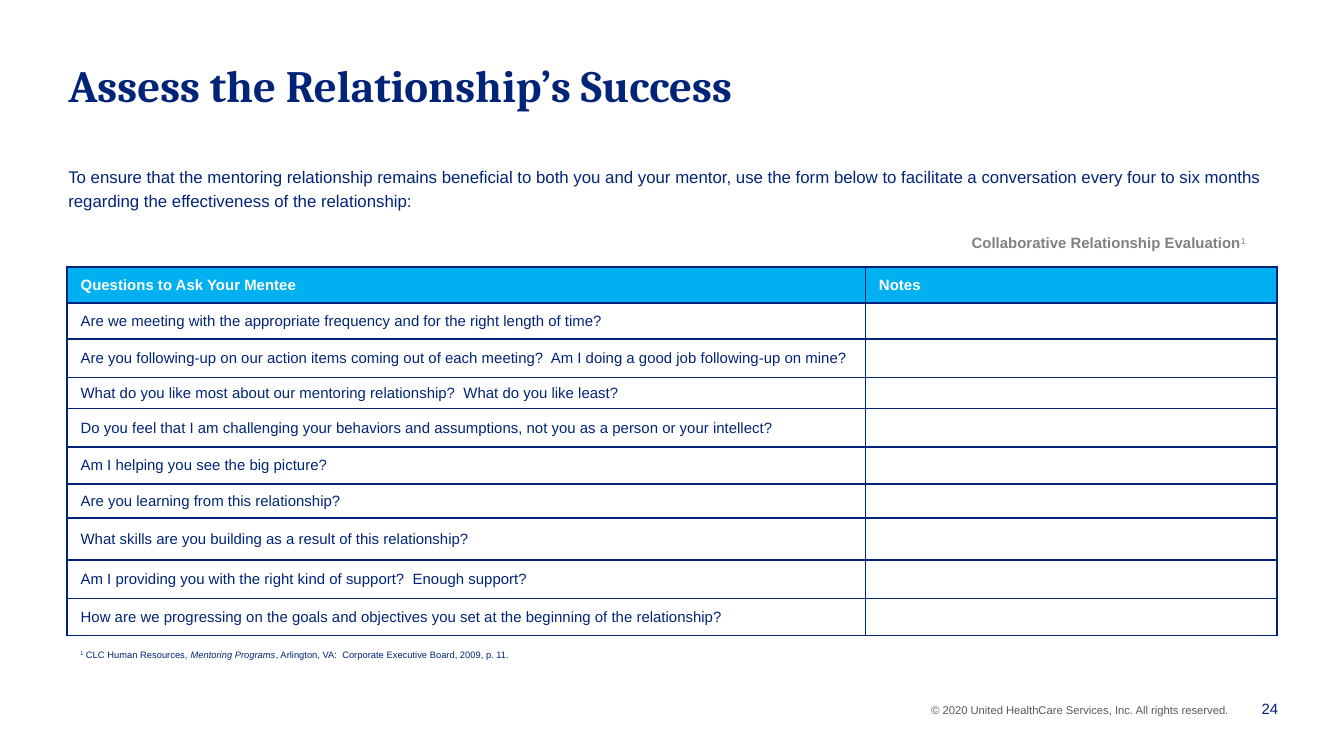
from lxml.etree import SubElement
from pptx import Presentation
from pptx.dml.color import RGBColor
from pptx.enum.text import MSO_ANCHOR, PP_ALIGN
from pptx.oxml.ns import qn
from pptx.util import Pt

NAVY = RGBColor(0x00, 0x24, 0x77)
SKY = RGBColor(0x00, 0xB0, 0xF0)
WHITE = RGBColor(0xFF, 0xFF, 0xFF)
GRAY = RGBColor(0x80, 0x80, 0x80)
DARK_GRAY = RGBColor(0x59, 0x59, 0x59)

COLUMN_WIDTHS = (427.7, 220.3)
ROW_HEIGHTS = (19.3, 19.5, 20.4, 16.6, 20.6, 19.8, 18.2, 22.5, 20.6, 19.8)
HEADERS = ("Questions to Ask Your Mentee", "Notes")
QUESTIONS = (
    "Are we meeting with the appropriate frequency and for the right length of time?",
    "Are you following-up on our action items coming out of each meeting?  "
    "Am I doing a good job following-up on mine?",
    "What do you like most about our mentoring relationship?  What do you like least?",
    "Do you feel that I am challenging your behaviors and assumptions, "
    "not you as a person or your intellect?",
    "Am I helping you see the big picture?",
    "Are you learning from this relationship?",
    "What skills are you building as a result of this relationship?",
    "Am I providing you with the right kind of support?  Enough support?",
    "How are we progressing on the goals and objectives you set "
    "at the beginning of the relationship?",
)


def add_run(paragraph, text, size=8, color=NAVY, name="Arial",
            bold=False, italic=False, superscript=False):
    run = paragraph.add_run()
    run.text = text
    font = run.font
    font.size = Pt(size)
    font.name = name
    font.bold = bold
    font.italic = italic
    font.color.rgb = color
    if superscript:
        font._element.set("baseline", "30000")


def add_text_box(slide, left, top, width, height,
                 margins=(7.2, 3.6, 7.2, 3.6), anchor=MSO_ANCHOR.TOP):
    frame = slide.shapes.add_textbox(Pt(left), Pt(top), Pt(width), Pt(height)).text_frame
    frame.word_wrap = True
    frame.vertical_anchor = anchor
    frame.margin_left, frame.margin_top, frame.margin_right, frame.margin_bottom = map(Pt, margins)
    return frame.paragraphs[0]


def set_borders(cell):
    properties = cell._tc.get_or_add_tcPr()
    for position, side in enumerate(("a:lnL", "a:lnR", "a:lnT", "a:lnB")):
        line = properties.makeelement(qn(side), {"w": str(Pt(1))})
        fill = SubElement(line, qn("a:solidFill"))
        SubElement(fill, qn("a:srgbClr"), val=str(NAVY))
        properties.insert(position, line)


def format_cell(cell, text, header=False):
    cell.vertical_anchor = MSO_ANCHOR.MIDDLE
    if header:
        cell.fill.solid()
        cell.fill.fore_color.rgb = SKY
    else:
        cell.fill.background()
    set_borders(cell)
    paragraph = cell.text_frame.paragraphs[0]
    if text:
        add_run(paragraph, text, color=WHITE if header else NAVY, bold=header)
    else:
        paragraph._p.get_or_add_endParaRPr().set("sz", "800")


def add_question_table(slide):
    rows = [HEADERS] + [(question, "") for question in QUESTIONS]
    table = slide.shapes.add_table(
        len(rows), len(HEADERS), Pt(36), Pt(143),
        Pt(sum(COLUMN_WIDTHS)), Pt(sum(ROW_HEIGHTS))).table
    table.horz_banding = False
    for column, width in zip(table.columns, COLUMN_WIDTHS):
        column.width = Pt(width)
    for row, height, texts in zip(table.rows, ROW_HEIGHTS, rows):
        row.height = Pt(height)
        for cell, text in zip(row.cells, texts):
            format_cell(cell, text, header=texts is HEADERS)


def add_intro(slide):
    paragraph = add_text_box(slide, 29.5, 83.5, 658, 32.4)
    paragraph.line_spacing = 1.2
    add_run(paragraph, "To ensure that the mentoring relationship remains beneficial to both "
            "you and your mentor, use the form below to facilitate a conversation every four "
            "to six months regarding the effectiveness of the relationship:", size=9)


def add_footnote(slide):
    paragraph = add_text_box(slide, 36, 347.8, 648, 5.8, margins=(7.2, 0, 7.2, 0))
    add_run(paragraph, "1", size=5, superscript=True)
    add_run(paragraph, " CLC Human Resources, ", size=5)
    add_run(paragraph, "Mentoring Programs", size=5, italic=True)
    add_run(paragraph, ", Arlington, VA:  Corporate Executive Board, 2009, p. 11.", size=5)


def add_footer(slide):
    add_run(add_text_box(slide, 491.8, 373, 185.8, 14.4),
            "© 2020 United HealthCare Services, Inc. All rights reserved.",
            size=6, color=DARK_GRAY)
    page_number = add_text_box(slide, 663.8, 368.6, 28.1, 22.3, anchor=MSO_ANCHOR.MIDDLE)
    page_number.alignment = PP_ALIGN.RIGHT
    add_run(page_number, "24")


def main():
    presentation = Presentation()
    presentation.slide_width = Pt(720)
    presentation.slide_height = Pt(405)
    slide = presentation.slides.add_slide(presentation.slide_layouts[6])

    add_run(add_text_box(slide, 29.5, 27.4, 571.7, 43.2),
            "Assess the Relationship’s Success", size=24, name="Cambria", bold=True)
    add_intro(slide)
    caption = add_text_box(slide, 498.2, 125.3, 214.6, 9.4, margins=(22.3, 0, 15.8, 0))
    add_run(caption, "Collaborative Relationship Evaluation", color=GRAY, bold=True)
    add_run(caption, "1", color=GRAY, superscript=True)
    add_question_table(slide)
    add_footnote(slide)
    add_footer(slide)
    presentation.save("out.pptx")


if __name__ == "__main__":
    main()
